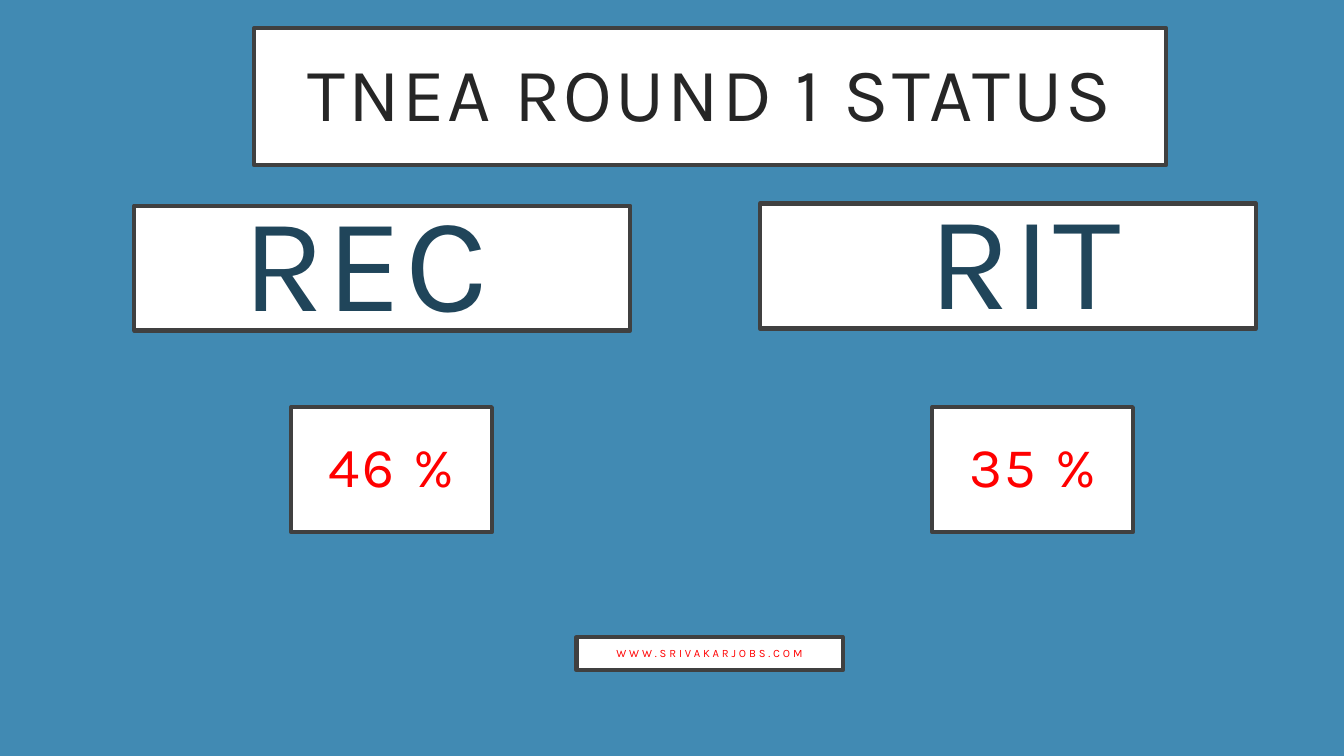
from pptx import Presentation, util as u
from pptx.dml.color import RGBColor
from pptx.enum import shapes, text

SKY = RGBColor(0x41, 0x8A, 0xB3)
WHITE = RGBColor(0xFF, 0xFF, 0xFF)
FRAME = RGBColor(0x40, 0x40, 0x40)
INK = RGBColor(0x26, 0x26, 0x26)
NAVY = RGBColor(0x20, 0x45, 0x5A)
RED = RGBColor(0xFF, 0x00, 0x00)

WIDTH, HEIGHT = u.Inches(13.333), u.Inches(7.5)
COLUMNS, ROWS = 40, 30


class StatusBoard:
    """Draws framed panels on a slide measured in grid columns and rows."""

    font_name = "Karla"
    tracking = 2

    def __init__(self, slide):
        self.slide = slide
        slide.background.fill.solid()
        slide.background.fill.fore_color.rgb = SKY

    def panel(self, column, row, columns, rows, wording, size, color):
        panel = self.slide.shapes.add_shape(
            shapes.MSO_SHAPE.RECTANGLE,
            round(column * WIDTH / COLUMNS), round(row * HEIGHT / ROWS),
            round(columns * WIDTH / COLUMNS), round(rows * HEIGHT / ROWS))
        panel.shadow.inherit = False
        panel.fill.solid()
        panel.fill.fore_color.rgb = WHITE
        panel.line.color.rgb = FRAME
        panel.line.width = u.Pt(3)
        self.label(panel.text_frame, wording, size, color)

    def label(self, frame, wording, size, color):
        frame.word_wrap = True
        frame.vertical_anchor = text.MSO_ANCHOR.MIDDLE
        frame.margin_left = frame.margin_right = u.Inches(0.3)
        frame.margin_top = frame.margin_bottom = u.Inches(0.2)
        frame.text = wording
        paragraph = frame.paragraphs[0]
        paragraph.alignment = text.PP_ALIGN.CENTER
        paragraph.line_spacing = 0.9
        for run in paragraph.runs:
            run.font.name = self.font_name
            run.font.size = u.Pt(size)
            run.font.color.rgb = color
            run._r.get_or_add_rPr().set("spc", str(self.tracking * 100))


def main():
    deck = Presentation()
    deck.slide_width, deck.slide_height = WIDTH, HEIGHT
    board = StatusBoard(deck.slides.add_slide(deck.slide_layouts[6]))

    board.panel(7.56, 1.12, 27.15, 5.44, "TNEA ROUND 1 STATUS", 54, INK)
    colleges = [
        ("REC ", 4, 8.16, "46 %", 8.67),
        (" RIT", 22.62, 8.08, "35 %", 27.75),
    ]
    for college, college_column, college_row, share, share_column in colleges:
        board.panel(college_column, college_row, 14.76, 4.96, college, 96, NAVY)
        board.panel(share_column, 16.16, 5.97, 4.96, share, 40, RED)
    board.panel(17.16, 25.28, 7.92, 1.32, "WWW.SRIVAKARJOBS.COM", 8, RED)

    deck.save("out.pptx")


if __name__ == "__main__":
    main()
